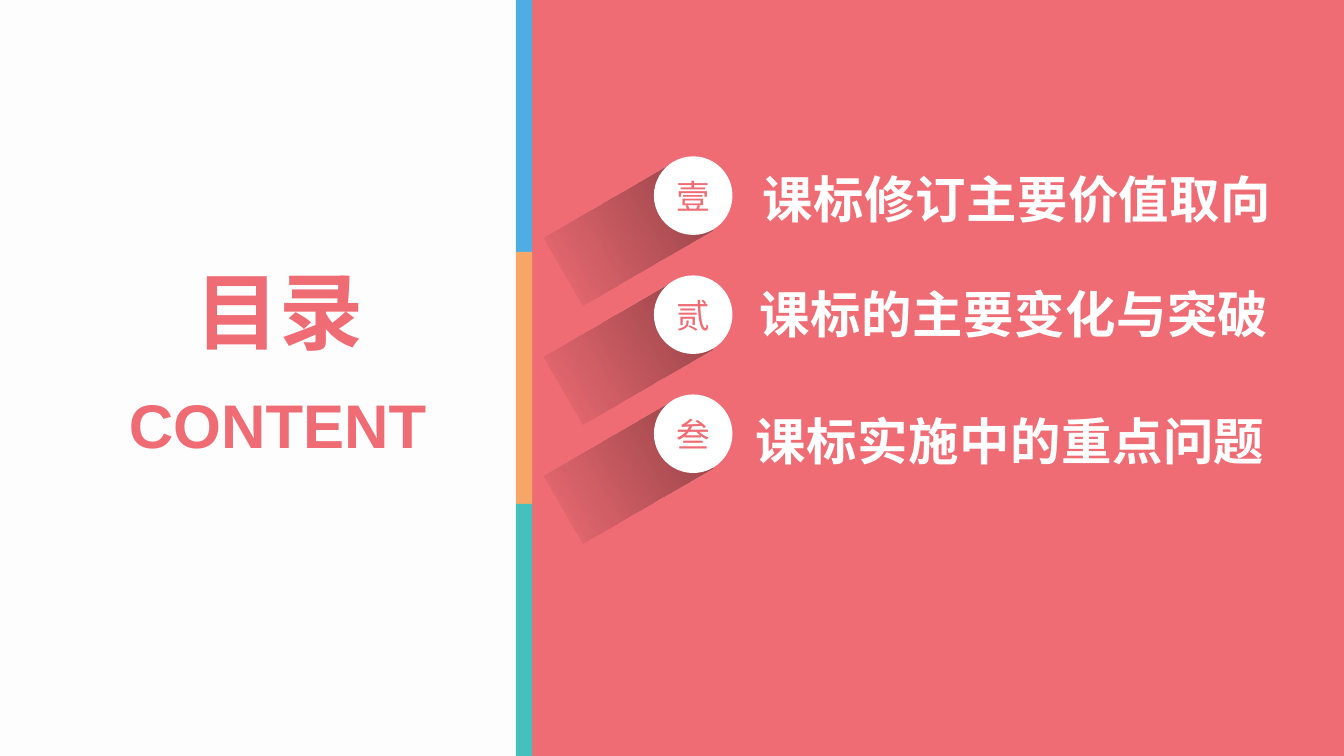
from lxml import etree
from pptx import Presentation
from pptx import util as u
from pptx.dml.color import RGBColor
from pptx.enum import shapes, text
from pptx.oxml.ns import qn

COLOURS = {
    "paper": "FDFDFD",
    "coral": "EF6C74",
    "white": "FFFFFF",
    "black": "000000",
    "blue": "4EADE3",
    "orange": "F6A667",
    "teal": "44C0BD",
}
PAGE_HEIGHT = 19.05
ENTRY_PITCH = 3
CIRCLE_SIZE = 1.98


class ContentsPage:
    def __init__(self, deck):
        self.page = deck.slides.add_slide(deck.slide_layouts[5])
        background = self.page.background.fill
        background.solid()
        background.fore_color.rgb = self.colour("paper")

    def colour(self, name):
        return RGBColor.from_string(COLOURS[name])

    def shape(self, kind, left, top, width, height, fill=None):
        shape = self.page.shapes.add_shape(
            kind, u.Cm(left), u.Cm(top), u.Cm(width), u.Cm(height))
        shape.shadow.inherit = False
        shape.line.fill.background()
        if fill:
            shape.fill.solid()
            shape.fill.fore_color.rgb = self.colour(fill)
        return shape

    def rectangle(self, left, top, width, height, fill=None):
        return self.shape(shapes.MSO_SHAPE.RECTANGLE, left, top, width, height, fill)

    def long_shadow(self, left, top, width, height):
        shadow = self.rectangle(left, top, width, height)
        shadow.rotation = 330
        shadow.fill.gradient()
        shadow.fill.gradient_angle = 0
        for stop in shadow.fill.gradient_stops:
            stop.color.rgb = self.colour("black")
        for tone, opacity in zip(shadow._element.spPr.iter(qn("a:srgbClr")), (0, 40)):
            etree.SubElement(tone, qn("a:alpha")).set("val", str(opacity * 1000))

    def set_words(self, shape, words, size, colour, bold=True, font="Arial",
                  align=text.PP_ALIGN.CENTER, spacing=0):
        frame = shape.text_frame
        frame.word_wrap = False
        frame.auto_size = text.MSO_AUTO_SIZE.NONE
        frame.vertical_anchor = text.MSO_ANCHOR.MIDDLE
        frame.margin_left = frame.margin_right = 0
        frame.margin_top = frame.margin_bottom = 0
        para = frame.paragraphs[0]
        para.alignment = align
        span = para.add_run()
        span.text = words
        span.font.name = font
        span.font.size = u.Pt(size)
        span.font.bold = bold
        span.font.color.rgb = self.colour(colour)
        if spacing:
            span.font._element.set("spc", str(spacing))

    def title(self, words, left, top, width, height):
        title = self.page.shapes.title
        title.left, title.top = u.Cm(left), u.Cm(top)
        title.width, title.height = u.Cm(width), u.Cm(height)
        self.set_words(title, words, 60, "coral")

    def label(self, words, left, top, width, height, size, colour, **style):
        box = self.page.shapes.add_textbox(
            u.Cm(left), u.Cm(top), u.Cm(width), u.Cm(height))
        self.set_words(box, words, size, colour, **style)

    def numeral(self, words, left, top):
        circle = self.shape(shapes.MSO_SHAPE.OVAL, left, top,
                            CIRCLE_SIZE, CIRCLE_SIZE, "white")
        self.set_words(circle, words, 24, "coral", bold=False)


def main():
    deck = Presentation()
    deck.slide_width, deck.slide_height = u.Cm(33.87), u.Cm(PAGE_HEIGHT)
    contents = ContentsPage(deck)
    contents.rectangle(13.28, 0, 20.59, PAGE_HEIGHT, "coral")

    entries = [
        ("壹", "课标修订主要价值取向", 19.22, 4.09, "Arial"),
        ("贰", "课标的主要变化与突破", 19.15, 6.99, "Arial"),
        ("叁", "课标实施中的重点问题", 19.05, 10.19, "Calibri"),
    ]
    for index, (number, words, left, top, font) in enumerate(entries):
        offset = index * ENTRY_PITCH
        contents.long_shadow(13.94, 4.9 + offset, 3.78, CIRCLE_SIZE)
        contents.numeral(number, 16.48, 3.94 + offset)
        contents.label(words, left, top, 13, 1.8, 36, "white", font=font,
                       align=text.PP_ALIGN.LEFT, spacing=40)

    contents.title("目录", 3.04, 6.4, 8, 2.8)
    contents.label("CONTENT", 2.5, 9.67, 9, 2, 44, "coral")

    stripe_height = PAGE_HEIGHT / 3
    for index, colour in enumerate(("blue", "orange", "teal")):
        contents.rectangle(13, index * stripe_height, 0.41, stripe_height, colour)

    deck.save("out.pptx")


if __name__ == "__main__":
    main()
